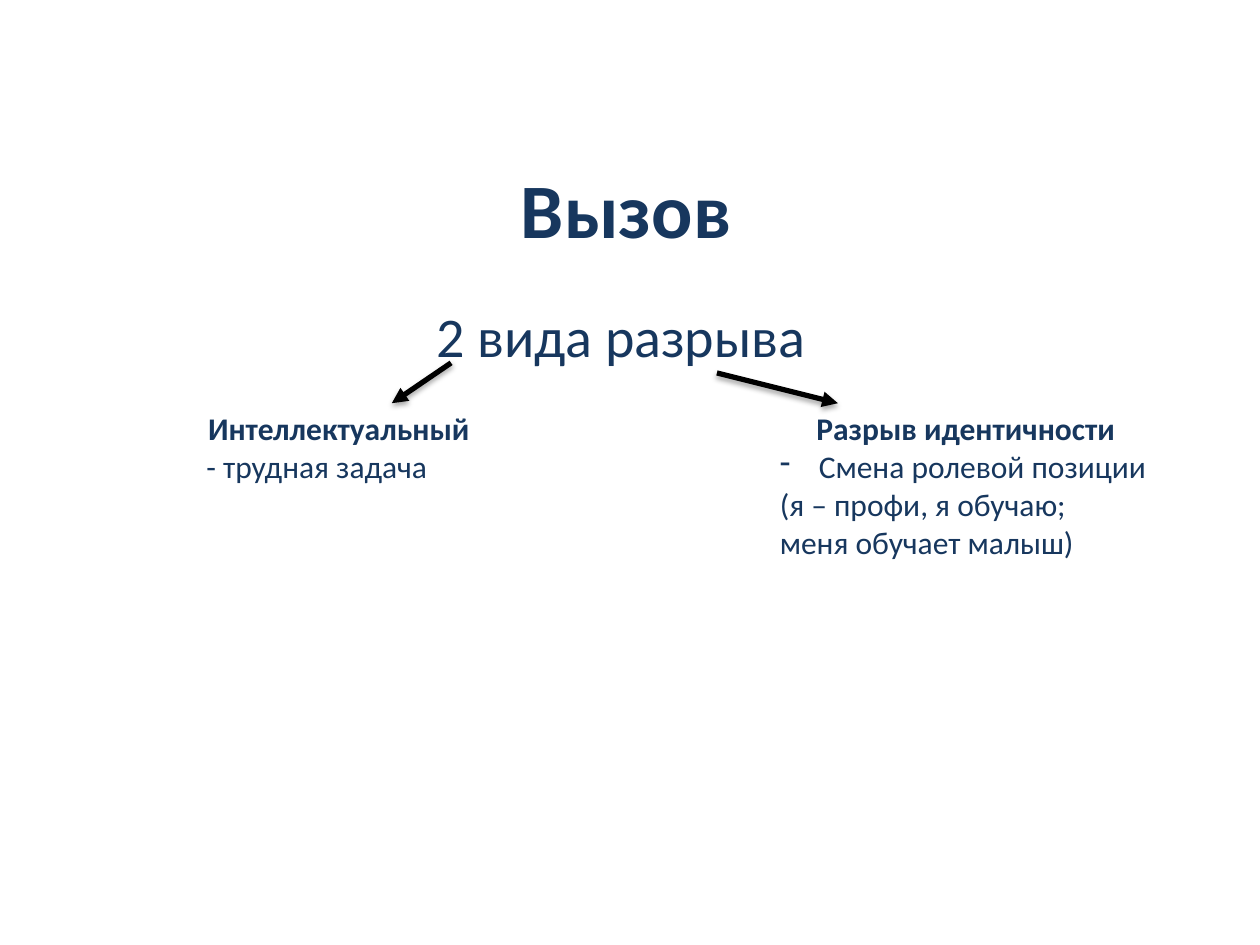
from lxml.etree import SubElement
from pptx import Presentation
from pptx.dml.color import RGBColor
from pptx.enum.shapes import MSO_CONNECTOR
from pptx.enum.text import MSO_ANCHOR, MSO_AUTO_SIZE, PP_ALIGN
from pptx.oxml import parse_xml
from pptx.oxml.ns import nsdecls, qn
from pptx.util import Inches, Pt

COLORS = {"text": "17375E", "arrow": "000000"}
FONT = "Calibri"

TITLE = {"text": "Вызов", "box": (0.47, 1.02, 9, 1.25), "size": 44, "bold": True}
SUBTITLE = {"text": "2 вида разрыва", "box": (1, 2.34, 7.86, 0.62), "size": 32, "bold": False}

# Each branch: heading, then (text, has a dash bullet) lines, and its arrow's ends
BRANCHES = [
    {
        "heading": "Интеллектуальный",
        "lines": [("- трудная задача", False)],
        "box": (1.54, 3.2, 2.3, 0.71),
        "arrow": (3.58, 2.88, 3.11, 3.2),
    },
    {
        "heading": "Разрыв идентичности",
        "lines": [
            ("Смена ролевой позиции", True),
            ("(я – профи, я обучаю;", False),
            ("меня обучает малыш)", False),
        ],
        "box": (6.09, 3.2, 3.15, 1.31),
        "arrow": (5.69, 2.96, 6.65, 3.2),
    },
]

SHADOW = f"""<a:effectLst {nsdecls("a")}>
  <a:outerShdw blurRad="{Pt(3.1)}" dist="{Pt(1.8)}" dir="5400000" rotWithShape="0">
    <a:srgbClr val="{COLORS["arrow"]}"><a:alpha val="35000"/></a:srgbClr>
  </a:outerShdw>
</a:effectLst>"""


def write(paragraph, text, size, bold, alignment):
    paragraph.text = text
    paragraph.alignment = alignment
    font_format = {"name": FONT, "size": Pt(size), "bold": bold}
    for run in paragraph.runs:
        for name, value in font_format.items():
            setattr(run.font, name, value)
        run.font.color.rgb = RGBColor.from_string(COLORS["text"])


def set_bullet(paragraph, character=None, indent=0):
    """Give the paragraph a hanging bullet, or none without a character."""
    properties = paragraph._p.get_or_add_pPr()
    properties.set("marL", str(Inches(indent)))
    properties.set("indent", str(-Inches(indent)))
    if character:
        SubElement(properties, qn("a:buChar"), char=character)
    else:
        SubElement(properties, qn("a:buNone"))


def fill_placeholder(placeholder, content, anchor):
    left, top, width, height = map(Inches, content["box"])
    position = {"left": left, "top": top, "width": width, "height": height}
    for name, value in position.items():
        setattr(placeholder, name, value)
    frame = placeholder.text_frame
    frame.auto_size = MSO_AUTO_SIZE.NONE
    frame.vertical_anchor = anchor
    paragraph = frame.paragraphs[0]
    set_bullet(paragraph)
    write(paragraph, content["text"], content["size"], content["bold"], PP_ALIGN.CENTER)
    paragraph.space_before = Pt(0)


def add_branch_text(slide, branch):
    frame = slide.shapes.add_textbox(*map(Inches, branch["box"])).text_frame
    frame.word_wrap = False
    frame.auto_size = MSO_AUTO_SIZE.SHAPE_TO_FIT_TEXT
    write(frame.paragraphs[0], branch["heading"], 18, True, PP_ALIGN.CENTER)
    for text, has_bullet in branch["lines"]:
        paragraph = frame.add_paragraph()
        if has_bullet:
            set_bullet(paragraph, "-", 0.31)
        write(paragraph, text, 18, False, PP_ALIGN.LEFT)


def add_arrow(slide, ends):
    arrow = slide.shapes.add_connector(MSO_CONNECTOR.STRAIGHT, *map(Inches, ends))
    arrow.line.color.rgb = RGBColor.from_string(COLORS["arrow"])
    arrow.line.width = Pt(3)
    SubElement(arrow.line._get_or_add_ln(), qn("a:tailEnd"), type="triangle")
    arrow._element.spPr.append(parse_xml(SHADOW))


def main():
    presentation = Presentation()
    presentation.slide_width = Inches(10)
    presentation.slide_height = Inches(7.5)
    slide = presentation.slides.add_slide(presentation.slide_layouts[1])
    fill_placeholder(slide.shapes.title, TITLE, MSO_ANCHOR.MIDDLE)
    fill_placeholder(slide.placeholders[1], SUBTITLE, MSO_ANCHOR.TOP)
    for branch in BRANCHES:
        add_branch_text(slide, branch)
    for branch in BRANCHES:
        add_arrow(slide, branch["arrow"])
    presentation.save("out.pptx")


if __name__ == "__main__":
    main()
